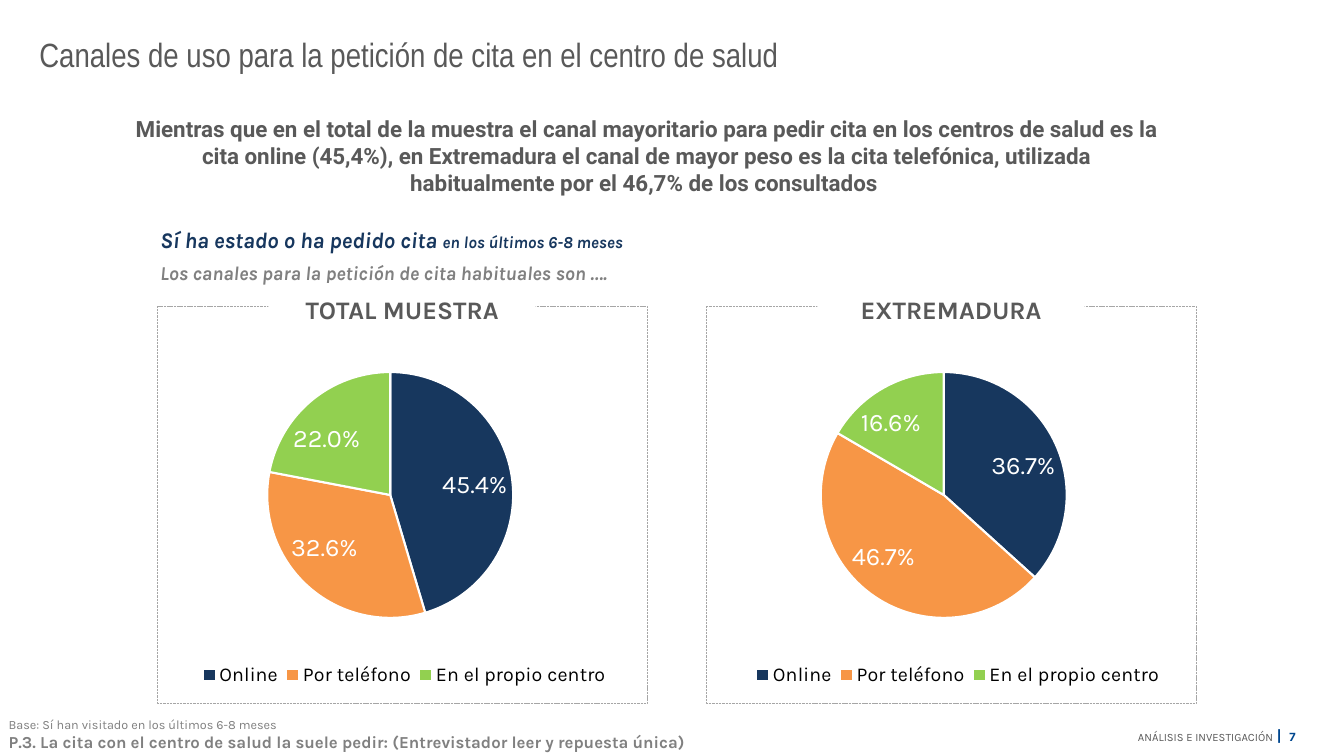
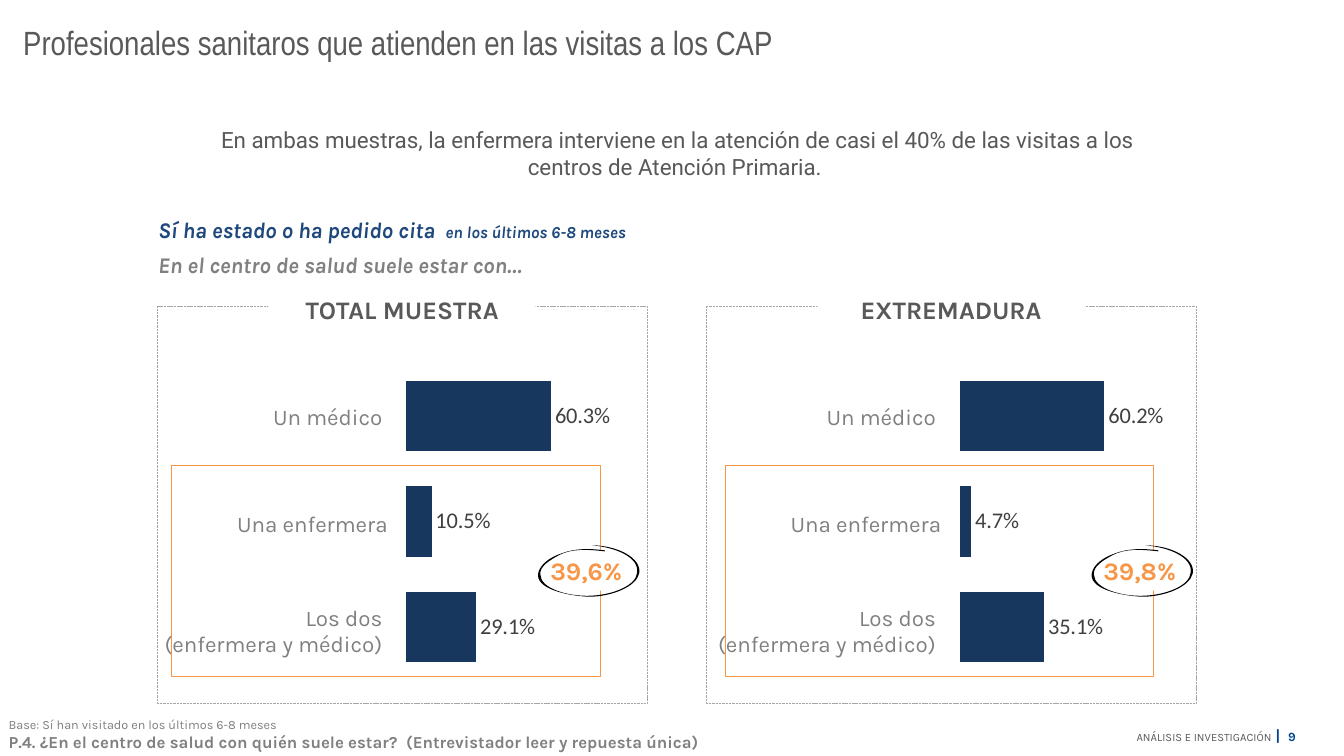
from lxml import etree
from pptx import Presentation
from pptx.chart.data import CategoryChartData
from pptx.dml.color import RGBColor
from pptx.enum.chart import XL_CHART_TYPE, XL_LABEL_POSITION, XL_LEGEND_POSITION
from pptx.enum.dml import MSO_LINE
from pptx.enum.shapes import MSO_SHAPE
from pptx.enum.text import MSO_ANCHOR, MSO_AUTO_SIZE, PP_ALIGN
from pptx.oxml.ns import qn
from pptx.util import Inches, Pt

NAVY = RGBColor(0x17, 0x37, 0x5E)
BLUE = RGBColor(0x1F, 0x49, 0x7D)
FOOTER_BLUE = RGBColor(0x00, 0x47, 0x8F)
ORANGE = RGBColor(0xF7, 0x96, 0x46)
GREEN = RGBColor(0x92, 0xD0, 0x50)
DARK = RGBColor(0x59, 0x59, 0x59)
LABEL = RGBColor(0x40, 0x40, 0x40)
GREY = RGBColor(0x80, 0x80, 0x80)
FRAME = RGBColor(0xA6, 0xA6, 0xA6)
WHITE = RGBColor(0xFF, 0xFF, 0xFF)
BLACK = RGBColor(0, 0, 0)

# The grid has square cells: 133.3 columns by 75 rows.
CELL = Inches(0.1)
PANEL_STEP = 54.45
CONTENT_STEP = 54.9
NO_TABLE_STYLE = "{2D5ABB26-0587-4C30-8999-92F81FD0307C}"

# Hand-drawn ring in grid cells: size, start point, then Bézier curves.
RING_SIZE = (10.6, 5.2)
RING_START = (7, 0.6)
RING_CURVES = [
    ((5.5, 0.4), (4, 0.4), (2.7, 0.9)),
    ((1.5, 1.3), (0.6, 2), (0.4, 2.8)),
    ((0, 4.4), (3.2, 5.1), (5.4, 5.2)),
    ((7.7, 5.2), (10.1, 4.2), (10.4, 2.9)),
    ((10.7, 1.4), (8.3, 0.1), (5.7, 0.1)),
    ((8.1, 0.3), (10.4, 1.3), (10.2, 2.8)),
    ((10.1, 4.1), (7.8, 5), (5.6, 5.1)),
    ((3.4, 5.2), (0.6, 4.4), (0.6, 3)),
    ((0.5, 2.2), (1.5, 1.6), (2.4, 1.1)),
    ((3.7, 0.4), (5.3, 0.5), (7, 0.7)),
]


def cells(*values):
    return [round(v * CELL) for v in values]


def style(size, color, name="Karla", **extra):
    return {"size": Pt(size), "color": color, "name": name, **extra}


def format_font(font, fmt):
    for key, value in fmt.items():
        if key == "color":
            font.color.rgb = value
        else:
            setattr(font, key, value)


def bend(sp, size, start, curves):
    """Turn the straight segments of a freeform into cubic curves."""
    path = next(sp.element.iter(qn("a:path")))
    for key, value in zip("wh", cells(*size)):
        path.set(key, str(value))

    def add_point(parent, point):
        x, y = cells(*point)
        etree.SubElement(parent, qn("a:pt"), x=str(x), y=str(y))

    move = path.find(qn("a:moveTo"))
    move.remove(move[0])
    add_point(move, start)
    for line, curve in zip(path.findall(qn("a:lnTo")), curves):
        bezier = etree.Element(qn("a:cubicBezTo"))
        for point in curve:
            add_point(bezier, point)
        path.replace(line, bezier)


def manual_layout(**values):
    """Chart layout in shares of the chart; target='inner' fixes the plot."""
    layout = etree.Element(qn("c:layout"))
    manual = etree.SubElement(layout, qn("c:manualLayout"))
    if "target" in values:
        etree.SubElement(manual, qn("c:layoutTarget"), val=values.pop("target"))
    for key in "xy":
        etree.SubElement(manual, qn(f"c:{key}Mode"), val="edge")
    for key, value in values.items():
        etree.SubElement(manual, qn(f"c:{key}"), val=str(value))
    return layout


class Deck:
    def __init__(self):
        self.prs = Presentation()
        self.prs.slide_width, self.prs.slide_height = Inches(13.33), Inches(7.5)
        self.s = None

    def slide(self, title, area, number, question):
        self.s = self.prs.slides.add_slide(self.prs.slide_layouts[5])
        sp = self.s.shapes.title
        sp.left, sp.top, sp.width, sp.height = cells(*area)
        self.fill_text(sp.text_frame, [[(title, style(24, DARK, "Arial Narrow"))]])
        self.text((110.4, 71.5, 19.1, 2.9), [[
            ("ANÁLISIS E INVESTIGACIÓN", style(8, DARK)),
            (" ", style(11, DARK)),
            ("|  ", style(11, FOOTER_BLUE, bold=True)),
            (str(number), style(9, FOOTER_BLUE, bold=True)),
        ]], align=PP_ALIGN.RIGHT, anchor=MSO_ANCHOR.MIDDLE)
        self.text((0, 70.6, 91.9, 4.4), [
            [("Base: Sí han visitado en los últimos 6-8 meses", style(9, GREY))],
            [(question, style(12, GREY, bold=True))],
        ], anchor=MSO_ANCHOR.BOTTOM, margins=(0.85, 0.4, 0.85, 0.4))

    def fill_text(self, tf, lines, align=PP_ALIGN.LEFT, anchor=MSO_ANCHOR.TOP,
                  margins=(1, 0.5, 1, 0.5), after=0):
        tf.word_wrap = True
        tf.auto_size = MSO_AUTO_SIZE.NONE
        tf.vertical_anchor = anchor
        for side, value in zip(("left", "top", "right", "bottom"), cells(*margins)):
            setattr(tf, f"margin_{side}", value)
        for i, runs in enumerate(lines):
            p = tf.add_paragraph() if i else tf.paragraphs[0]
            p.alignment = align
            p.space_before, p.space_after = Pt(0), Pt(after)
            self.add_runs(p, runs)

    def add_runs(self, p, runs):
        """Write runs; a line feed in a text becomes a line break."""
        for text, fmt in runs:
            for i, part in enumerate(text.split("\n")):
                if i:
                    p.add_line_break()
                r = p.add_run()
                r.text = part
                format_font(r.font, fmt)

    def text(self, area, lines, fill=None, **options):
        if fill is None:
            sp = self.s.shapes.add_textbox(*cells(*area))
        else:
            sp = self.rect(area, fill=fill)
        self.fill_text(sp.text_frame, lines, **options)

    def rect(self, area, fill=None, line=None, width=0.25, dash=None):
        sp = self.s.shapes.add_shape(MSO_SHAPE.RECTANGLE, *cells(*area))
        sp.shadow.inherit = False
        if fill is None:
            sp.fill.background()
        else:
            sp.fill.solid()
            sp.fill.fore_color.rgb = fill
        if line is None:
            sp.line.fill.background()
        else:
            sp.line.color.rgb = line
            sp.line.width = Pt(width)
            sp.line.dash_style = dash
        return sp

    def message(self, area, text, bold):
        self.text(area, [[(text, style(16, DARK, "Roboto", bold=bold))]], fill=WHITE,
                  align=PP_ALIGN.CENTER, anchor=MSO_ANCHOR.MIDDLE, after=6)

    def subtitle(self, area, lead, prompt, color, prompt_size):
        slanted = {"bold": True, "italic": True}
        self.text(area, [
            [(lead, style(16, color, **slanted)),
             ("en los últimos 6-8 meses", style(12, color, **slanted))],
            [(prompt, style(prompt_size, GREY, **slanted))],
        ], fill=WHITE, after=6)

    def panels(self):
        for i, heading in enumerate(("TOTAL MUESTRA", "EXTREMADURA")):
            x = 15.6 + i * PANEL_STEP
            self.rect((x, 30.4, 48.6, 39.4), line=FRAME, dash=MSO_LINE.SQUARE_DOT)
            self.text((x + 11.03, 28.1, 26.5, 5.3),
                      [[(heading, style(18, DARK, bold=True))]], fill=WHITE,
                      align=PP_ALIGN.CENTER, anchor=MSO_ANCHOR.MIDDLE, after=6)

    def chart(self, kind, area, categories, values, plot, font, label_font, position):
        data = CategoryChartData()
        data.categories = categories
        data.add_series("Series 1", values)
        chart = self.s.shapes.add_chart(kind, *cells(*area), data).chart
        chart.has_title = False
        chart.has_legend = False
        format_font(chart.font, font)
        labels = chart.plots[0].series[0].data_labels
        labels.show_value = True
        labels.number_format = r"0.0\%"
        labels.number_format_is_linked = False
        labels.position = position
        format_font(labels.font, label_font)
        plot_area = next(chart.element.iter(qn("c:plotArea")))
        for old in plot_area.findall(qn("c:layout")):
            plot_area.remove(old)
        plot_area.insert(0, manual_layout(target="inner", **dict(zip("xywh", plot))))
        return chart

    def pie(self, area, categories, values):
        chart = self.chart(XL_CHART_TYPE.PIE, area, categories, values,
                           (0.196, 0.089, 0.562, 0.667), style(10, BLACK, "Calibri"),
                           style(18, WHITE), XL_LABEL_POSITION.BEST_FIT)
        plot = chart.plots[0]
        plot.vary_by_categories = True
        for i, color in enumerate((NAVY, ORANGE, GREEN)):
            point = plot.series[0].points[i].format
            point.fill.solid()
            point.fill.fore_color.rgb = color
            point.line.color.rgb = WHITE
            point.line.width = Pt(1.5)
        chart.has_legend = True
        legend = chart.legend
        legend.position = XL_LEGEND_POSITION.BOTTOM
        legend.include_in_layout = False
        format_font(legend.font, style(14, BLACK))
        position = next(chart.element.iter(qn("c:legendPos")))
        position.addnext(manual_layout(x=0.03, y=0.83, w=0.96, h=0.08))

    def bars(self, area, values):
        font = style(11, LABEL, "Calibri")
        chart = self.chart(XL_CHART_TYPE.BAR_CLUSTERED, area, ("1", "2", "3"), values,
                           (0, 0.004, 0.724, 0.973), font, {**font, "size": Pt(16)},
                           XL_LABEL_POSITION.OUTSIDE_END)
        plot = chart.plots[0]
        plot.vary_by_categories = False
        plot.gap_width = 50
        fill = plot.series[0].format.fill
        fill.solid()
        fill.fore_color.rgb = NAVY
        chart.category_axis.reverse_order = True
        axis = chart.value_axis
        axis.minimum_scale, axis.maximum_scale = 0, 100
        axis.has_major_gridlines = False
        axis.visible = chart.category_axis.visible = False

    def row_labels(self, area, labels):
        frame = self.s.shapes.add_table(len(labels), 1, *cells(*area))
        next(frame.element.iter(qn("a:tableStyleId"))).text = NO_TABLE_STYLE
        table = frame.table
        table.first_row = table.horz_banding = False
        for cell, label in zip(table.iter_cells(), labels):
            cell.fill.background()
            cell.vertical_anchor = MSO_ANCHOR.MIDDLE
            cell.margin_left = cell.margin_top = cell.margin_right = Inches(0.01)
            cell.margin_bottom = 0
            p = cell.text_frame.paragraphs[0]
            p.alignment = PP_ALIGN.RIGHT
            self.add_runs(p, [(label, style(16, GREY))])

    def ringed_total(self, x, y, total):
        self.text((x + 0.25, y + 0.6, 9.8, 4), [[(total, style(18, ORANGE, bold=True))]],
                  fill=WHITE, align=PP_ALIGN.CENTER)
        builder = self.s.shapes.build_freeform(*cells(*RING_START))
        builder.add_line_segments([cells(*curve[-1]) for curve in RING_CURVES])
        sp = builder.convert_to_shape()
        sp.left, sp.top, sp.width, sp.height = cells(x, y, *RING_SIZE)
        bend(sp, RING_SIZE, RING_START, RING_CURVES)
        sp.shadow.inherit = False
        sp.fill.solid()
        sp.fill.fore_color.rgb = BLACK
        sp.line.fill.background()


def channels_slide(deck):
    deck.slide("Canales de uso para la petición de cita en el centro de salud",
               (2.9, 2.9, 106.4, 5), 7,
               "P.3. La cita con el centro de salud la suele pedir: "
               "(Entrevistador leer y repuesta única)")
    deck.subtitle((14.9, 21.9, 75.4, 6.9), "Sí ha estado o ha pedido cita ",
                  "Los canales para la petición de cita habituales son ….", NAVY, 14)
    deck.panels()
    for i, values in enumerate(((45.4, 32.6, 22), (36.7, 46.7, 16.6))):
        deck.pie((18 + i * CONTENT_STEP, 32.25, 43.4, 39.9),
                 ("Online", "Por teléfono", "En el propio centro"), values)
    deck.message((12, 10.75, 104.3, 9.3),
                 "Mientras que en el total de la muestra el canal mayoritario para pedir "
                 "cita en los centros de salud es la cita online (45,4%), en Extremadura "
                 "el canal de mayor peso es la cita telefónica, utilizada habitualmente "
                 "por el 46,7% de los consultados ", bold=True)


def professionals_slide(deck):
    deck.slide("Profesionales sanitaros que atienden en las visitas a los CAP",
               (1.3, 1.7, 114.2, 5), 9,
               "P.4. ¿En el centro de salud con quién suele estar?  "
               "(Entrevistador leer y repuesta única)")
    deck.subtitle((14.7, 20.95, 58.3, 7.2), "Sí ha estado o ha pedido cita  ",
                  "En el centro de salud suele estar con…", BLUE, 16)
    deck.panels()
    samples = (((60.3, 10.5, 29.1), "39,6%"), ((60.2, 4.7, 35.1), "39,8%"))
    for i, (values, total) in enumerate(samples):
        x = i * CONTENT_STEP
        deck.row_labels((11.75 + x, 36.1, 26.8, 31.9),
                        ("Un médico ", "Una enfermera", "Los dos \n(enfermera y médico) "))
        deck.bars((40.3 + x, 35.95, 32.9, 32.2), values)
        deck.rect((17.04 + x, 46.2, 42.5, 20.9), line=ORANGE, width=0.5)
        deck.ringed_total(53 + x, 54, total)
    deck.message((20.5, 10.7, 93.4, 8.9),
                 "En ambas muestras, la enfermera interviene en la atención de casi el 40% "
                 "de las visitas a los centros de Atención Primaria. ", bold=False)


def main():
    deck = Deck()
    channels_slide(deck)
    professionals_slide(deck)
    deck.prs.save("out.pptx")


if __name__ == "__main__":
    main()
